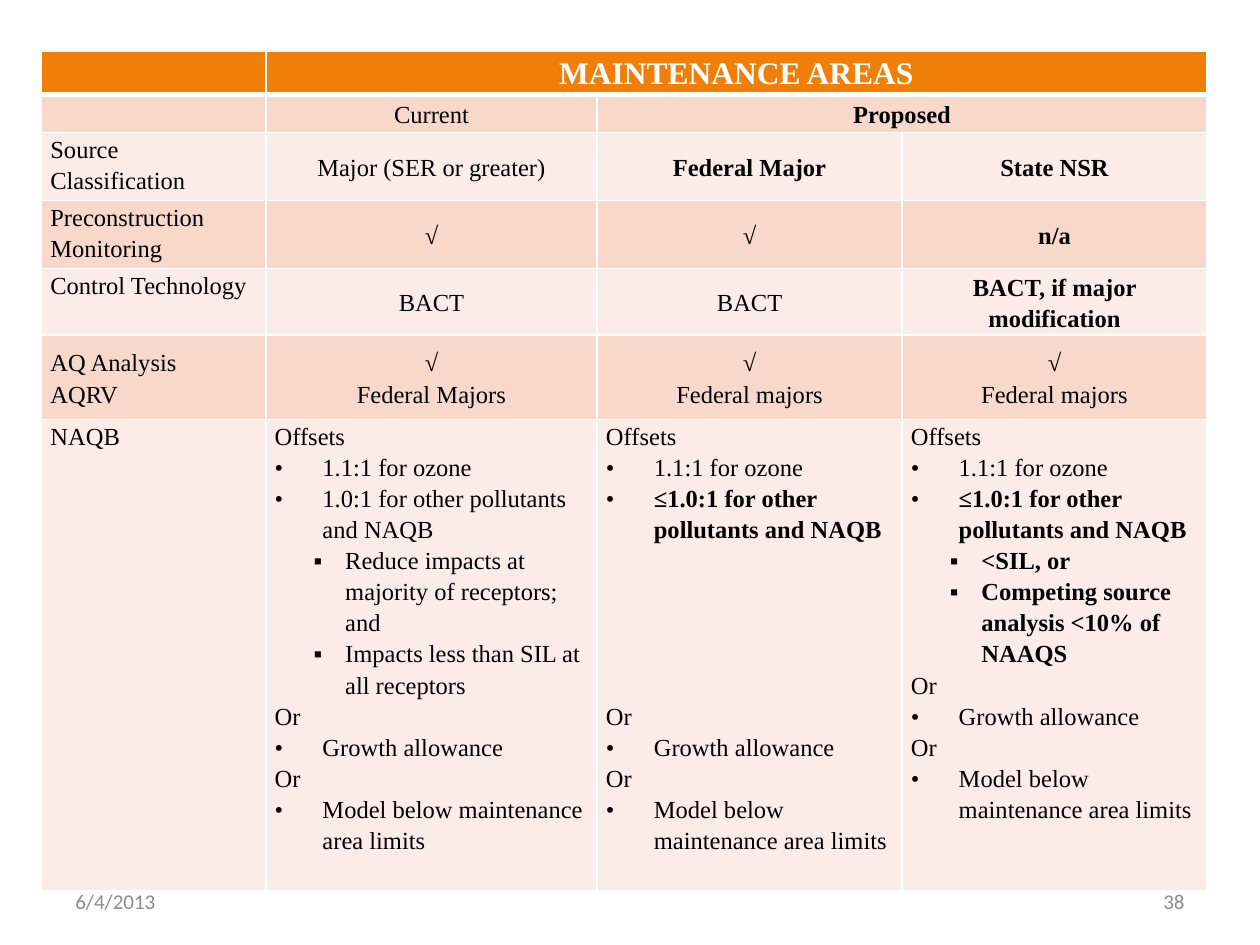
import pptx
import pptx.util
import pptx.dml.color
import pptx.enum.text
import pptx.oxml.ns
from lxml import etree

Inches, Pt = pptx.util.Inches, pptx.util.Pt
RGB = pptx.dml.color.RGBColor.from_string
ALIGN = pptx.enum.text.PP_ALIGN
ANCHOR = pptx.enum.text.MSO_ANCHOR
qn = pptx.oxml.ns.qn

COLORS = {"header": "F07F09", "dark band": "F9D8CC", "light band": "FCECE7",
          "text": "000000", "white": "FFFFFF", "footer": "8C8C8C"}
FONT = "Times New Roman"
INDENTS = {"•": (0.38, -0.38), "▪": (0.56, -0.25)}
BLANK_LINE = 17.8  # points taken by one 14 pt line


def add_border(cell, position, side, width):
    line = etree.Element(qn("a:ln" + side), w=str(Pt(width)))
    fill = etree.SubElement(line, qn("a:solidFill"))
    etree.SubElement(fill, qn("a:srgbClr"), val=COLORS["white"])
    cell._tc.get_or_add_tcPr().insert(position, line)


def write_cell(cell, lines, align, size, color):
    """Fill a cell from (text, bold, bullet) lines."""
    frame = cell.text_frame
    for index, (text, bold, bullet) in enumerate(lines):
        para = frame.paragraphs[0] if index == 0 else frame.add_paragraph()
        para.text = text
        para.alignment = align
        para.line_spacing = 1.15
        if bullet:
            margin, indent = INDENTS[bullet]
            properties = para._p.get_or_add_pPr()
            properties.set("marL", str(Inches(margin)))
            properties.set("indent", str(Inches(indent)))
            etree.SubElement(properties, qn("a:buFont"), typeface=FONT)
            etree.SubElement(properties, qn("a:buChar"), char=bullet)
        para.font.size = Pt(size)
        for span in para.runs:
            span.font.name = FONT
            span.font.size = Pt(size)
            span.font.bold = bold
            span.font.color.rgb = RGB(color)


deck = pptx.Presentation()
deck.slide_width, deck.slide_height = Inches(10), Inches(7.5)
page = deck.slides.add_slide(deck.slide_layouts[6])

empty = [("", False, None)]
check = ("√", True, None)
opening = [("Offsets", False, None), ("1.1:1 for ozone", False, "•")]
proposed_offset = ("≤1.0:1 for other pollutants and NAQB", True, "•")
alternatives = [("Or", False, None), ("Growth allowance", False, "•"),
                ("Or", False, None), ("Model below maintenance area limits", False, "•")]

rows = [
    [empty, [("MAINTENANCE AREAS", True, None)], empty, empty],
    [empty, [("Current", False, None)], [("Proposed", True, None)], empty],
    [[("Source Classification", False, None)], [("Major (SER or greater)", False, None)],
     [("Federal Major", True, None)], [("State NSR", True, None)]],
    [[("Preconstruction Monitoring", False, None)], [check], [check], [("n/a", True, None)]],
    [[("Control Technology", False, None)], [("BACT", False, None)],
     [("BACT", False, None)], [("BACT, if major modification", True, None)]],
    [[("AQ Analysis", False, None), ("AQRV", False, None)],
     [check, ("Federal Majors", False, None)],
     [check, ("Federal majors", False, None)],
     [check, ("Federal majors", False, None)]],
    [[("NAQB", False, None)],
     opening + [("1.0:1 for other pollutants and NAQB", False, "•"),
                ("Reduce impacts at majority of receptors; and", False, "▪"),
                ("Impacts less than SIL at all receptors", False, "▪")] + alternatives,
     opening + [proposed_offset] + alternatives,
     opening + [proposed_offset, ("<SIL, or", True, "▪"),
                ("Competing source analysis <10% of NAAQS", True, "▪")] + alternatives],
]
column_widths = [1.78, 2.63, 2.42, 2.42]
row_heights = [0.34, 0.3, 0.54, 0.54, 0.53, 0.67, 3.74]
last_row = len(rows) - 1

table = page.shapes.add_table(len(rows), len(column_widths), Inches(0.33), Inches(0.41),
                              Inches(sum(column_widths)), Inches(sum(row_heights))).table
table.first_row = False
for column, width in zip(table.columns, column_widths):
    column.width = Inches(width)
for row, height in zip(table.rows, row_heights):
    row.height = Inches(height)

for r, row in enumerate(rows):
    band = "header" if r == 0 else "dark band" if r % 2 else "light band"
    for c, lines in enumerate(row):
        cell = table.cell(r, c)
        cell.margin_left = cell.margin_right = Inches(0.07)
        cell.margin_top = cell.margin_bottom = 0
        cell.fill.solid()
        cell.fill.fore_color.rgb = RGB(COLORS[band])
        widths = {"L": 1, "R": 1, "T": 3 if r == 1 else 1, "B": 3 if r == 0 else 1}
        for position, (side, width) in enumerate(widths.items()):
            add_border(cell, position, side, width)

        centred = c > 0 and r < last_row
        if r > 0 and (centred or r == 5):
            cell.vertical_anchor = ANCHOR.MIDDLE
        write_cell(cell, lines, ALIGN.CENTER if centred else ALIGN.LEFT,
                   18 if r == 0 and c == 1 else 14,
                   COLORS["white" if r == 0 else "text"])

# The federal column lines its alternatives up with the current column.
table.cell(last_row, 2).text_frame.paragraphs[3].space_before = Pt(5 * BLANK_LINE)

table.cell(0, 1).merge(table.cell(0, 3))
table.cell(1, 2).merge(table.cell(1, 3))

# The footer comes last so that it stays in front of the table.
for left, text, align in ((0.5, "6/4/2013", ALIGN.LEFT), (7.17, "38", ALIGN.RIGHT)):
    box = page.shapes.add_textbox(Inches(left), Inches(6.95), Inches(2.33), Inches(0.4))
    box.text_frame.word_wrap = True
    box.text_frame.vertical_anchor = ANCHOR.MIDDLE
    para = box.text_frame.paragraphs[0]
    para.text = text
    para.alignment = align
    span = para.runs[0]
    span.font.name = "Calibri"
    span.font.size = Pt(12)
    span.font.color.rgb = RGB(COLORS["footer"])

deck.save("out.pptx")
